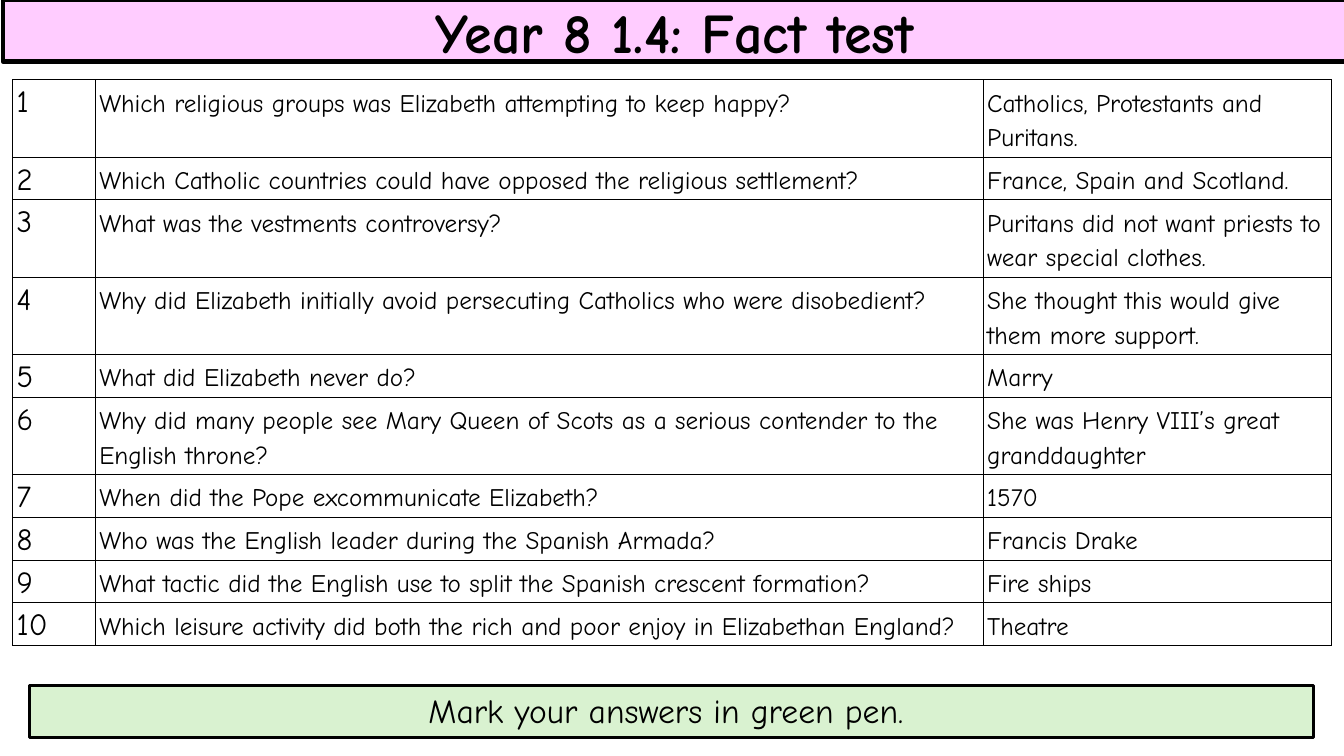
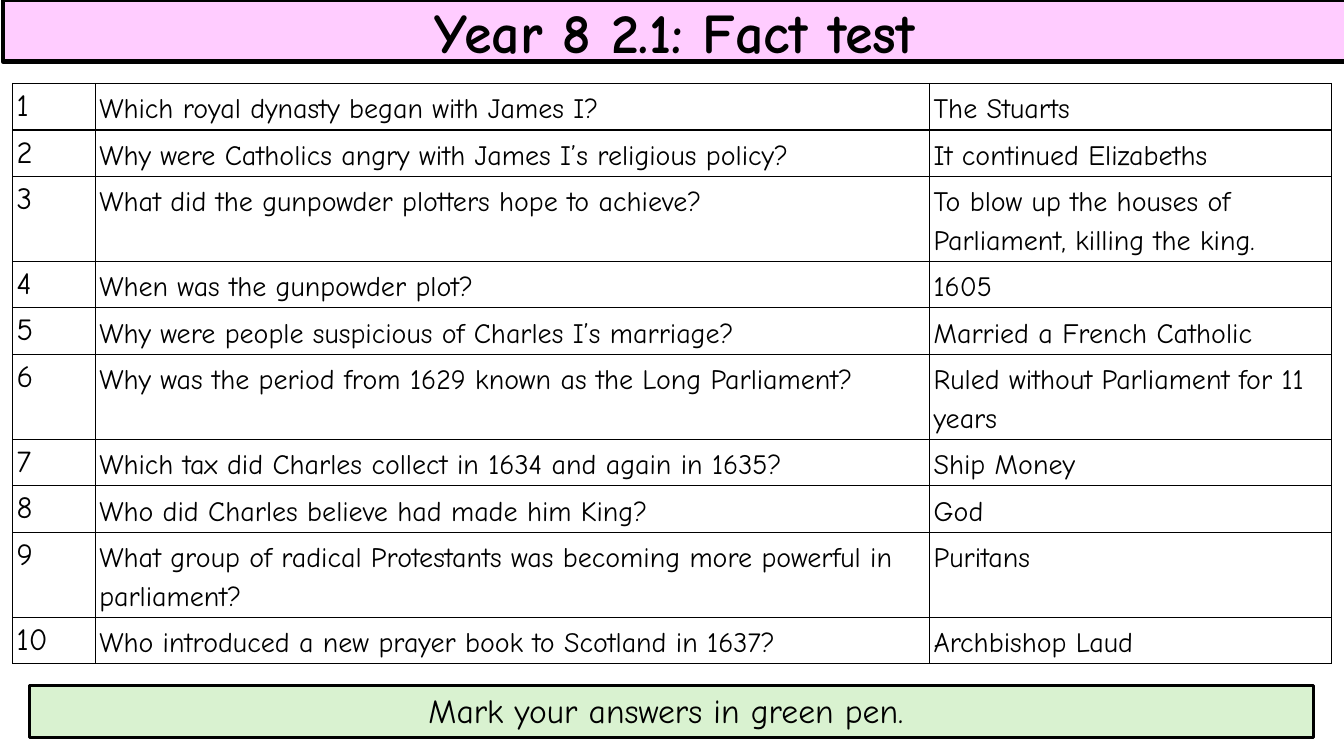
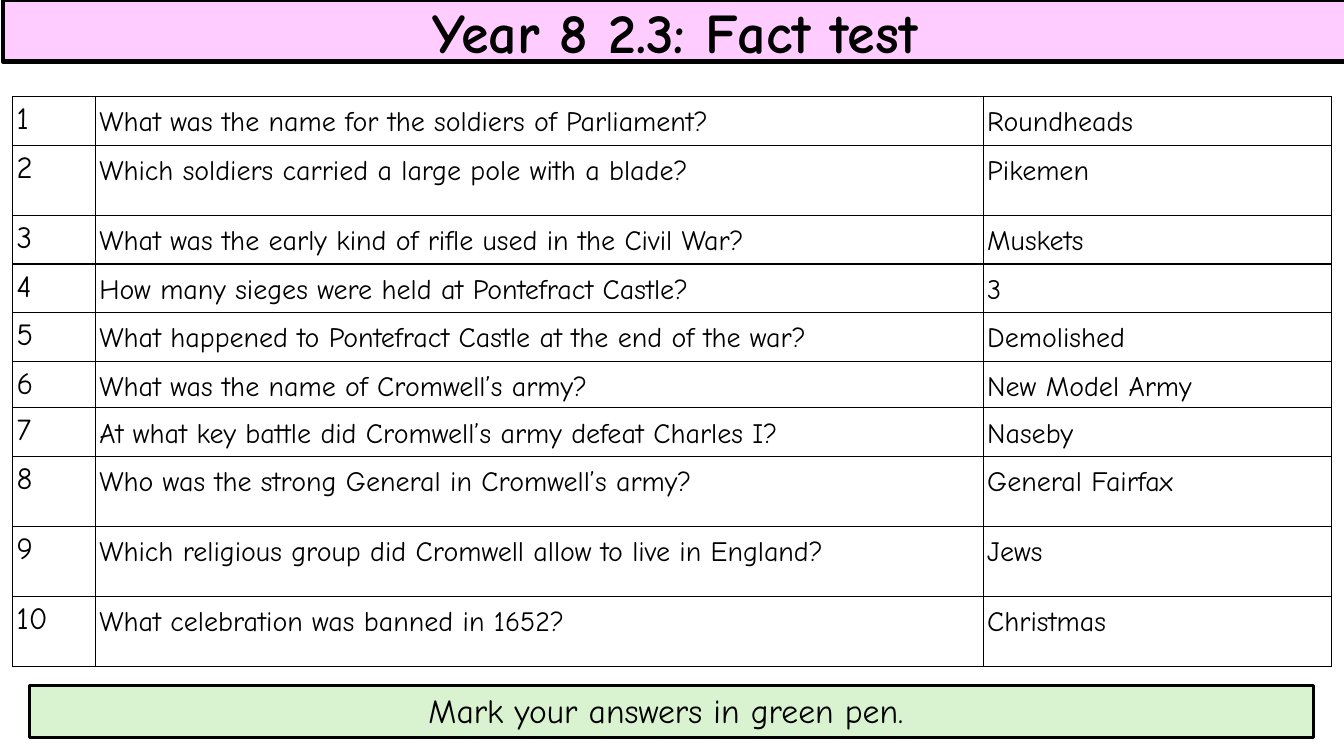
from lxml.etree import SubElement
from pptx import Presentation
from pptx.dml.color import RGBColor
from pptx.enum.shapes import MSO_SHAPE as Preset
from pptx.enum.text import MSO_ANCHOR as Anchor, PP_ALIGN as Align
from pptx.oxml.ns import qn
from pptx.util import Pt

COLOURS = {"ink": "000000", "paper": "FFFFFF", "title": "FFCCFF", "footer": "D9F2D0"}
FONT = "Comic Neue"


def colour(name):
    return RGBColor.from_string(COLOURS[name])


class FactTestDeck:
    """Holds the shared style and the slide being built."""

    table_left, table_width, number_width = 9, 942, 59
    inset = 2.9

    def __init__(self):
        self.presentation = Presentation()
        self.presentation.slide_width = Pt(960)
        self.presentation.slide_height = Pt(540)
        self.slide = None

    def new_slide(self):
        self.slide = self.presentation.slides.add_slide(self.presentation.slide_layouts[6])

    def run(self, paragraph, text, size, bold=False):
        run = paragraph.add_run()
        run.text = text
        run.font.name = FONT
        run.font.size = Pt(size)
        run.font.bold = bold
        run.font.color.rgb = colour("ink")

    def band(self, box, fill, line_width, text, size, bold=False, anchor=Anchor.MIDDLE):
        shape = self.slide.shapes.add_shape(Preset.RECTANGLE, *map(Pt, box))
        shape.shadow.inherit = False
        shape.fill.solid()
        shape.fill.fore_color.rgb = colour(fill)
        shape.line.color.rgb = colour("ink")
        shape.line.width = Pt(line_width)
        shape.text_frame.vertical_anchor = anchor
        paragraph = shape.text_frame.paragraphs[0]
        paragraph.alignment = Align.CENTER
        self.run(paragraph, text, size, bold)

    def title(self, unit):
        self.band((2, 0, 960, 44), "title", 3, f"Year 8 {unit}: Fact test", 40, bold=True)

    def footer(self):
        self.band((21, 489.5, 917.3, 37.4), "footer", 2.25,
                  "Mark your answers in green pen. ", 24, anchor=Anchor.TOP)

    def borders(self, cell):
        properties = cell._tc.get_or_add_tcPr()
        for position, side in enumerate(("a:lnL", "a:lnR", "a:lnT", "a:lnB")):
            line = SubElement(properties, qn(side), w=str(Pt(1)))
            properties.insert(position, line)
            fill = SubElement(line, qn("a:solidFill"))
            SubElement(fill, qn("a:srgbClr"), val=COLOURS["ink"])

    def cell(self, cell, text, size, spacing, after, vertical_inset):
        cell.margin_left = cell.margin_right = Pt(self.inset)
        cell.margin_top = cell.margin_bottom = Pt(vertical_inset)
        cell.fill.solid()
        cell.fill.fore_color.rgb = colour("paper")
        self.borders(cell)
        paragraph = cell.text_frame.paragraphs[0]
        paragraph.line_spacing = spacing
        paragraph.space_after = Pt(after)
        self.run(paragraph, text, size)

    def questions(self, top, question_width, size, heights, facts):
        frame = self.slide.shapes.add_table(
            len(facts), 3, Pt(self.table_left), Pt(top), Pt(self.table_width), Pt(sum(heights)))
        table = frame.table
        table.first_row = table.horz_banding = False
        answer_width = self.table_width - self.number_width - question_width
        for column, width in zip(table.columns, (self.number_width, question_width, answer_width)):
            column.width = Pt(width)
        for number, (row, height, fact) in enumerate(zip(table.rows, heights, facts), 1):
            row.height = Pt(height)
            self.cell(row.cells[0], str(number), 22, 1.15, 10, 0)
            for cell, text in zip(list(row.cells)[1:], fact):
                self.cell(cell, text, size, 1.19, 6, self.inset)


def row_heights(short, tall, tall_rows):
    return [tall if number in tall_rows else short for number in range(1, 11)]


# Questions and answers
ELIZABETH = [
    ("Which religious groups was Elizabeth attempting to keep happy?",
     "Catholics, Protestants and Puritans."),
    ("Which Catholic countries could have opposed the religious settlement?",
     "France, Spain and Scotland."),
    ("What was the vestments controversy?",
     "Puritans did not want priests to wear special clothes."),
    ("Why did Elizabeth initially avoid persecuting Catholics who were disobedient?",
     "She thought this would give them more support."),
    ("What did Elizabeth never do?", "Marry"),
    ("Why did many people see Mary Queen of Scots as a serious contender to the English throne?",
     "She was Henry VIII’s great granddaughter"),
    ("When did the Pope excommunicate Elizabeth?", "1570"),
    ("Who was the English leader during the Spanish Armada?", "Francis Drake"),
    ("What tactic did the English use to split the Spanish crescent formation?", "Fire ships"),
    ("Which leisure activity did both the rich and poor enjoy in Elizabethan England?", "Theatre"),
]
STUARTS = [
    ("Which royal dynasty began with James I?", "The Stuarts"),
    ("Why were Catholics angry with James I’s religious policy?", "It continued Elizabeths"),
    ("What did the gunpowder plotters hope to achieve?",
     "To blow up the houses of Parliament, killing the king."),
    ("When was the gunpowder plot?", "1605"),
    ("Why were people suspicious of Charles I’s marriage?", "Married a French Catholic"),
    ("Why was the period from 1629 known as the Long Parliament?",
     "Ruled without Parliament for 11 years"),
    ("Which tax did Charles collect in 1634 and again in 1635?", "Ship Money"),
    ("Who did Charles believe had made him King?", "God"),
    ("What group of radical Protestants was becoming more powerful in parliament?", "Puritans"),
    ("Who introduced a new prayer book to Scotland in 1637?", "Archbishop Laud"),
]
CIVIL_WAR = [
    ("What was the name for the soldiers of Parliament?", "Roundheads"),
    ("Which soldiers carried a large pole with a blade?", "Pikemen"),
    ("What was the early kind of rifle used in the Civil War?", "Muskets"),
    ("How many sieges were held at Pontefract Castle?", "3"),
    ("What happened to Pontefract Castle at the end of the war?", "Demolished"),
    ("What was the name of Cromwell’s army?", "New Model Army"),
    ("At what key battle did Cromwell’s army defeat Charles I?", "Naseby"),
    ("Who was the strong General in Cromwell’s army?", "General Fairfax"),
    ("Which religious group did Cromwell allow to live in England?", "Jews"),
    ("What celebration was banned in 1652?", "Christmas"),
]

# Row heights: one-line and two-line rows, with a tighter sixth row in the last test
civil_war_heights = row_heights(34.8, 50, {2, 8, 9, 10})
civil_war_heights[5] = 33

# Unit, table top, question width, text size, row heights, facts
TESTS = [
    ("1.4", 57, 634.3, 18, row_heights(30.4, 55, {1, 3, 4, 6}), ELIZABETH),
    ("2.1", 59.6, 596, 20, row_heights(33, 60.4, {3, 6, 9}), STUARTS),
    ("2.3", 69, 634.3, 20, civil_war_heights, CIVIL_WAR),
]


def main():
    deck = FactTestDeck()
    for unit, *table in TESTS:
        deck.new_slide()
        deck.questions(*table)
        deck.title(unit)
        deck.footer()
    deck.presentation.save("out.pptx")


if __name__ == "__main__":
    main()
